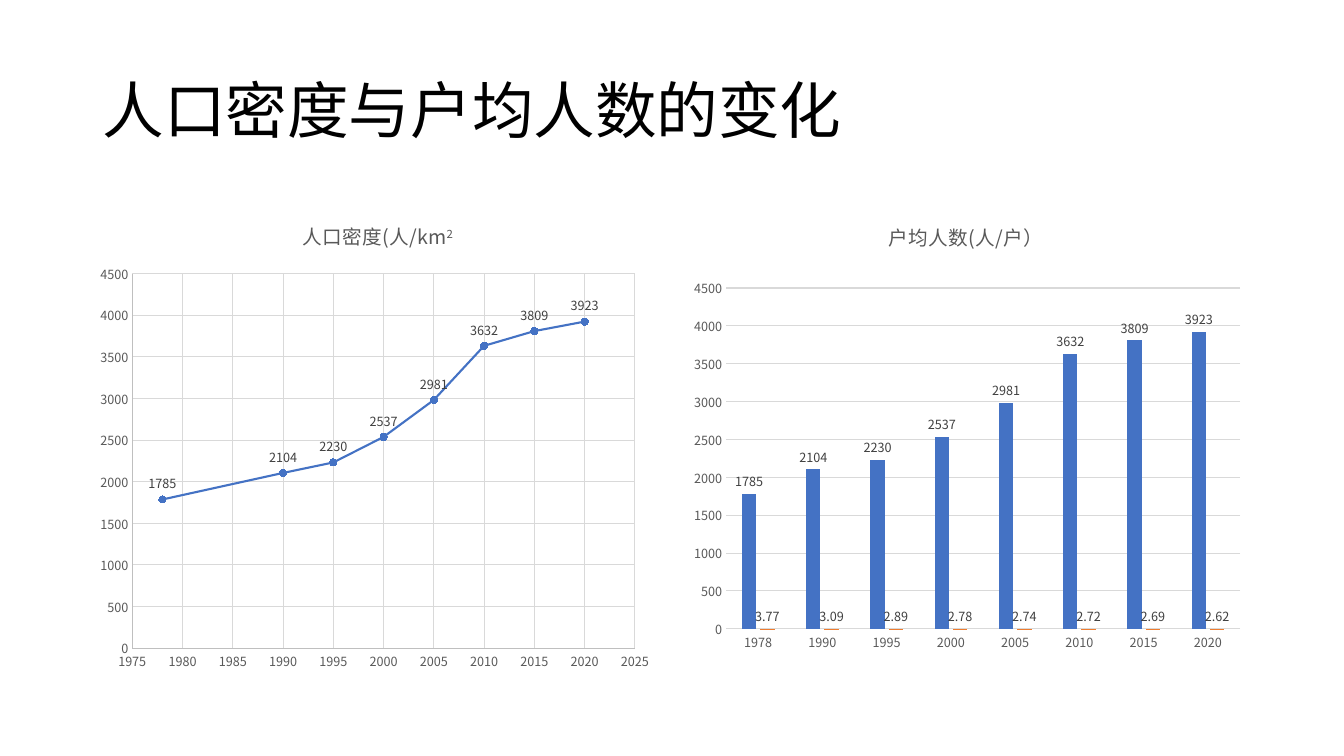
from lxml import etree
from pptx import Presentation
from pptx.chart.data import CategoryChartData, XyChartData
from pptx.chart.datalabel import DataLabels
from pptx.dml.color import RGBColor
from pptx.enum.chart import XL_CHART_TYPE as CT, XL_LABEL_POSITION as POS
from pptx.enum.chart import XL_MARKER_STYLE as MARKER, XL_TICK_MARK as TICK
from pptx.enum.text import MSO_ANCHOR, PP_ALIGN
from pptx.oxml import parse_xml
from pptx.oxml.ns import nsdecls, qn
from pptx.util import Pt

BLACK = RGBColor(0, 0, 0)
DARK = RGBColor(0x40, 0x40, 0x40)
GRAY = RGBColor(0x59, 0x59, 0x59)
AXIS = RGBColor(0xBF, 0xBF, 0xBF)
GRID = RGBColor(0xD9, 0xD9, 0xD9)
BLUE = RGBColor(0x44, 0x72, 0xC4)
ORANGE = RGBColor(0xED, 0x7D, 0x31)

YEARS = (1978, 1990, 1995, 2000, 2005, 2010, 2015, 2020)
DENSITY = (1785, 2104, 2230, 2537, 2981, 3632, 3809, 3923)
HOUSEHOLD = (3.77, 3.09, 2.89, 2.78, 2.74, 2.72, 2.69, 2.62)


class Deck:
    font = "Noto Sans CJK SC"

    def __init__(self, prs):
        self.s = prs.slides.add_slide(prs.slide_layouts[5])

    def style(self, font, size, color):
        for name, value in dict(name=self.font, size=Pt(size), bold=False).items():
            setattr(font, name, value)
        font.color.rgb = color

    def run(self, p, text, size, color):
        r = p.add_run()
        r.text = text
        self.style(r.font, size, color)
        rPr = r._r.get_or_add_rPr()
        etree.SubElement(rPr, qn("a:ea")).set("typeface", self.font)
        return r

    def title(self, text, x, y, w, h):
        sp = self.s.shapes.title
        box = dict(left=x, top=y, width=w, height=h)
        for name, value in box.items():
            setattr(sp, name, Pt(value))
        tf = sp.text_frame
        tf.vertical_anchor = MSO_ANCHOR.MIDDLE
        p = tf.paragraphs[0]
        p.alignment, p.line_spacing = PP_ALIGN.LEFT, 0.9
        self.run(p, text, 44, BLACK)

    def chart(self, kind, data, x, title, plot):
        """Add a chart with its title and a fixed inner plot area (x, y, w, h)."""
        frame = self.s.shapes.add_chart(kind, Pt(x), Pt(144), Pt(408), Pt(343), data)
        chart = frame.chart
        self.style(chart.font, 10, BLACK)
        chart.has_legend = False
        p = chart.chart_title.text_frame.paragraphs[0]
        runs = [self.run(p, text, 14, GRAY) for text in title]
        chart.chart_title.include_in_layout = False
        area = chart._chartSpace.chart.plotArea
        for old in area.findall(qn("c:layout")):
            area.remove(old)
        sizes = "".join(f'<c:{n} val="{v}"/>' for n, v in zip("xywh", plot))
        area.insert(0, parse_xml(
            f'<c:layout {nsdecls("c")}><c:manualLayout><c:layoutTarget val="inner"/>'
            f'<c:xMode val="edge"/><c:yMode val="edge"/>{sizes}'
            '</c:manualLayout></c:layout>'))
        chart.plots[0].vary_by_categories = False
        return chart, runs

    def axis(self, axis, line=None, grid=True, scale=None):
        axis.major_tick_mark = axis.minor_tick_mark = TICK.NONE
        self.style(axis.tick_labels.font, 9, GRAY)
        axis.has_major_gridlines = grid
        if grid:
            self.line(axis.major_gridlines.format.line, GRID, 0.75)
        if line is None:
            axis.format.line.fill.background()
        else:
            self.line(axis.format.line, line, 0.75)
        if scale:
            axis.minimum_scale, axis.maximum_scale, axis.major_unit = scale

    def line(self, line, color, width):
        line.color.rgb = color
        line.width = Pt(width)

    def labels(self, series, position):
        labels = DataLabels(series._element.get_or_add_dLbls())
        labels.show_value = True
        labels.position = position
        self.style(labels.font, 9, DARK)


def density_chart(deck):
    data = XyChartData()
    points = data.add_series("Series 1")
    for year, value in zip(YEARS, DENSITY):
        points.add_data_point(year, value)
    chart, runs = deck.chart(CT.XY_SCATTER_LINES, data, 66, ("人口密度(人/km", "2"),
                             (0.07, 0.15, 0.88, 0.78))
    runs[1]._r.get_or_add_rPr().set("baseline", "30000")
    deck.axis(chart.category_axis, AXIS, scale=(1975, 2025, 5))
    deck.axis(chart.value_axis, AXIS, scale=(0, 4500, 500))
    series = chart.plots[0].series[0]
    deck.line(series.format.line, BLUE, 1.5)
    marker = series.marker
    marker.style, marker.size = MARKER.CIRCLE, 5
    marker.format.fill.solid()
    marker.format.fill.fore_color.rgb = BLUE
    deck.line(marker.format.line, BLUE, 0.75)
    deck.labels(series, POS.ABOVE)


def household_chart(deck):
    data = CategoryChartData()
    data.categories = [str(year) for year in YEARS]
    data.add_series("Series 1", DENSITY)
    data.add_series("Series 2", HOUSEHOLD)
    chart, _ = deck.chart(CT.COLUMN_CLUSTERED, data, 486, ("户均人数(人/户）",),
                          (0.08, 0.18, 0.9, 0.71))
    deck.axis(chart.category_axis, GRID, grid=False)
    deck.axis(chart.value_axis, scale=(0, 4500, 500))
    plot = chart.plots[0]
    plot.gap_width, plot.overlap = 219, -27
    for series, color in zip(plot.series, (BLUE, ORANGE)):
        series.format.fill.solid()
        series.format.fill.fore_color.rgb = color
        deck.labels(series, POS.OUTSIDE_END)


def main():
    prs = Presentation()
    prs.slide_width, prs.slide_height = Pt(960), Pt(540)
    deck = Deck(prs)
    deck.title("人口密度与户均人数的变化", 66, 28.75, 828, 104.4)
    density_chart(deck)
    household_chart(deck)
    prs.save("out.pptx")


if __name__ == "__main__":
    main()
